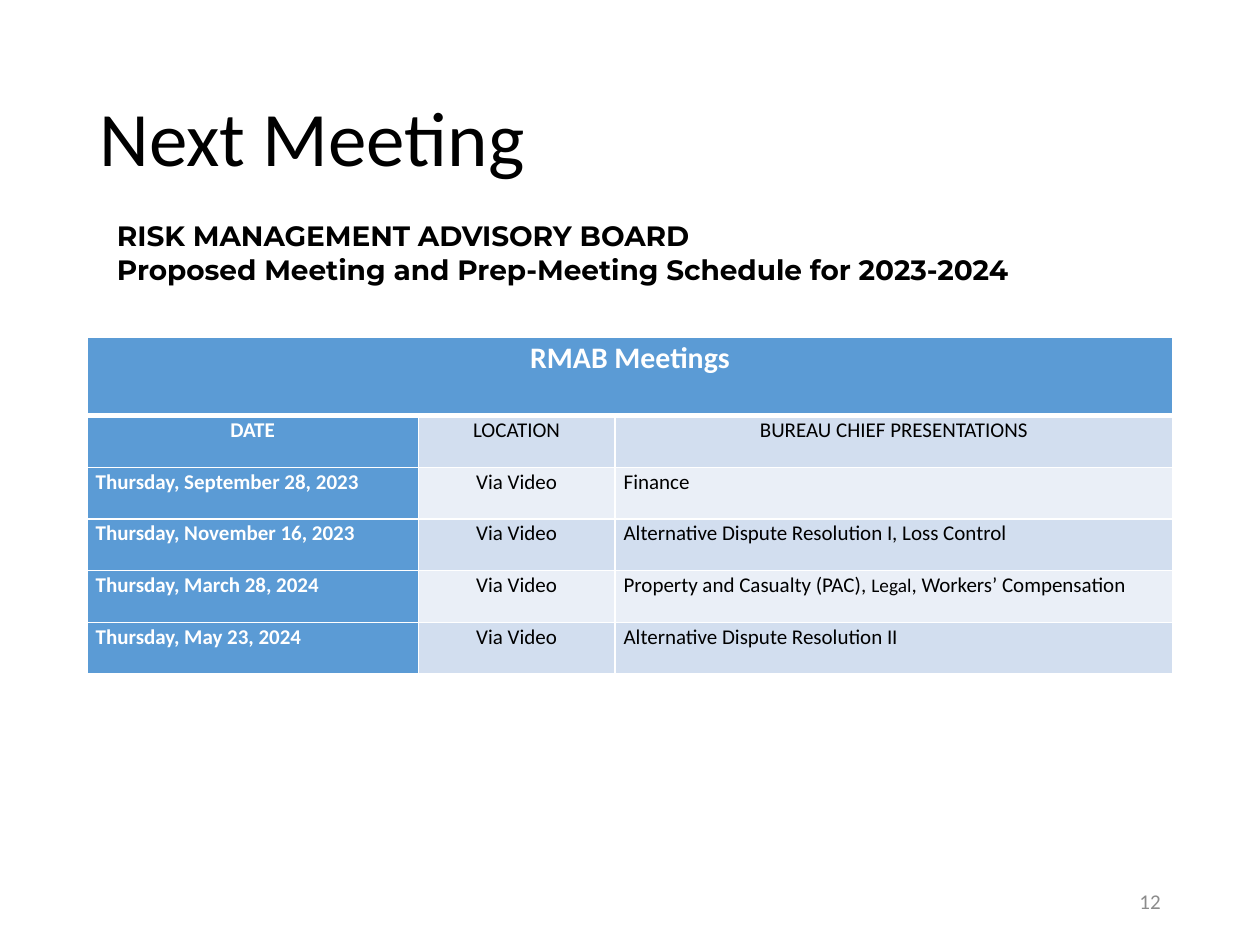
from lxml.etree import SubElement
from pptx import Presentation
from pptx.dml.color import RGBColor
from pptx.enum.text import MSO_ANCHOR as Anchor, PP_ALIGN as Align
from pptx.oxml.ns import qn
from pptx.util import Inches, Pt

BLUE, PALE, PALER, WHITE, BLACK, GREY = "5B9BD5", "D2DEEF", "EAEFF7", "FFFFFF", "000000", "8C8C8C"
LEFT, WIDTH = 0.69, 8.62


def style(para, size, color, bold=False, align=Align.LEFT, face="Calibri", spacing=None):
    para.font.size, para.font.bold, para.font.name = Pt(size), bold, face
    para.font.color.rgb = RGBColor.from_string(color)
    para.alignment, para.line_spacing = align, spacing


def add_text(left, top, width, height, lines, **look):
    box = page.shapes.add_textbox(*map(Inches, (left, top, width, height)))
    frame = box.text_frame
    frame.word_wrap, frame.vertical_anchor = True, Anchor.MIDDLE
    frame.text = "\n".join(lines)
    for para in frame.paragraphs:
        style(para, **look)
    return frame


deck = Presentation()
deck.slide_width, deck.slide_height = Inches(10), Inches(7.5)
page = deck.slides.add_slide(deck.slide_layouts[6])

# Title and page number
add_text(LEFT, 0.4, WIDTH, 1.45, ["Next Meeting"], size=44, color=BLACK, spacing=0.9)
add_text(7.06, 6.95, 2.25, 0.4, ["12"], size=12, color=GREY, align=Align.RIGHT)

# Meeting schedule
columns = [2.63, 1.56, 4.43]
row_heights = [0.62] + [0.41] * 5
rows = [
    ["RMAB Meetings", "", ""],
    ["DATE", "LOCATION", "BUREAU CHIEF PRESENTATIONS"],
    ["Thursday, September 28, 2023", "Via Video", "Finance"],
    ["Thursday, November 16, 2023", "Via Video", "Alternative Dispute Resolution I, Loss Control"],
    ["Thursday, March 28, 2024", "Via Video",
     ["Property and Casualty (PAC), ", "Legal", ", Workers’ Compensation"]],
    ["Thursday, May 23, 2024", "Via Video", "Alternative Dispute Resolution II"],
]
table = page.shapes.add_table(len(rows), len(columns), *map(
    Inches, (LEFT, 2.68, WIDTH, sum(row_heights)))).table
for column, width in zip(table.columns, columns):
    column.width = Inches(width)
for row, height in zip(table.rows, row_heights):
    row.height = Inches(height)
table.cell(0, 0).merge(table.cell(0, 2))

for r, texts in enumerate(rows):
    for c, text in enumerate(texts):
        cell = table.cell(r, c)
        cell.margin_left = cell.margin_right = Inches(0.07)
        cell.margin_top = cell.margin_bottom = 0

        # White borders, thicker under the heading; they precede the fill in the XML
        for side in ("lnL", "lnR", "lnT", "lnB"):
            thick = (r, side) in ((0, "lnB"), (1, "lnT"))
            line = SubElement(cell._tc.get_or_add_tcPr(), qn(f"a:{side}"), w=str(Pt(3 if thick else 1)))
            SubElement(SubElement(line, qn("a:solidFill")), qn("a:srgbClr"), val=WHITE)

        # Blue heading and date column, banded body
        strong = r == 0 or c == 0
        cell.fill.solid()
        cell.fill.fore_color.rgb = RGBColor.from_string(BLUE if strong else PALE if r % 2 else PALER)
        if not text:
            continue

        para = cell.text_frame.paragraphs[0]
        for part in [text] if isinstance(text, str) else text:
            span = para.add_run()
            span.text = part
            if part == "Legal":
                span.font.size = Pt(11)
        style(para, size=12 if r else 17, color=WHITE if strong else BLACK, bold=strong,
              align=Align.CENTER if r < 2 or c == 1 else Align.LEFT, spacing=1.07)

# Schedule heading, raised by a deep bottom inset
heading = add_text(0.83, 1.9, 9.17, 0.5, [
    "RISK MANAGEMENT ADVISORY BOARD",
    "Proposed Meeting and Prep-Meeting Schedule for 2023-2024",
], size=16, color=BLACK, bold=True, face="Montserrat")
heading.margin_bottom = Inches(0.34)

deck.save("out.pptx")
